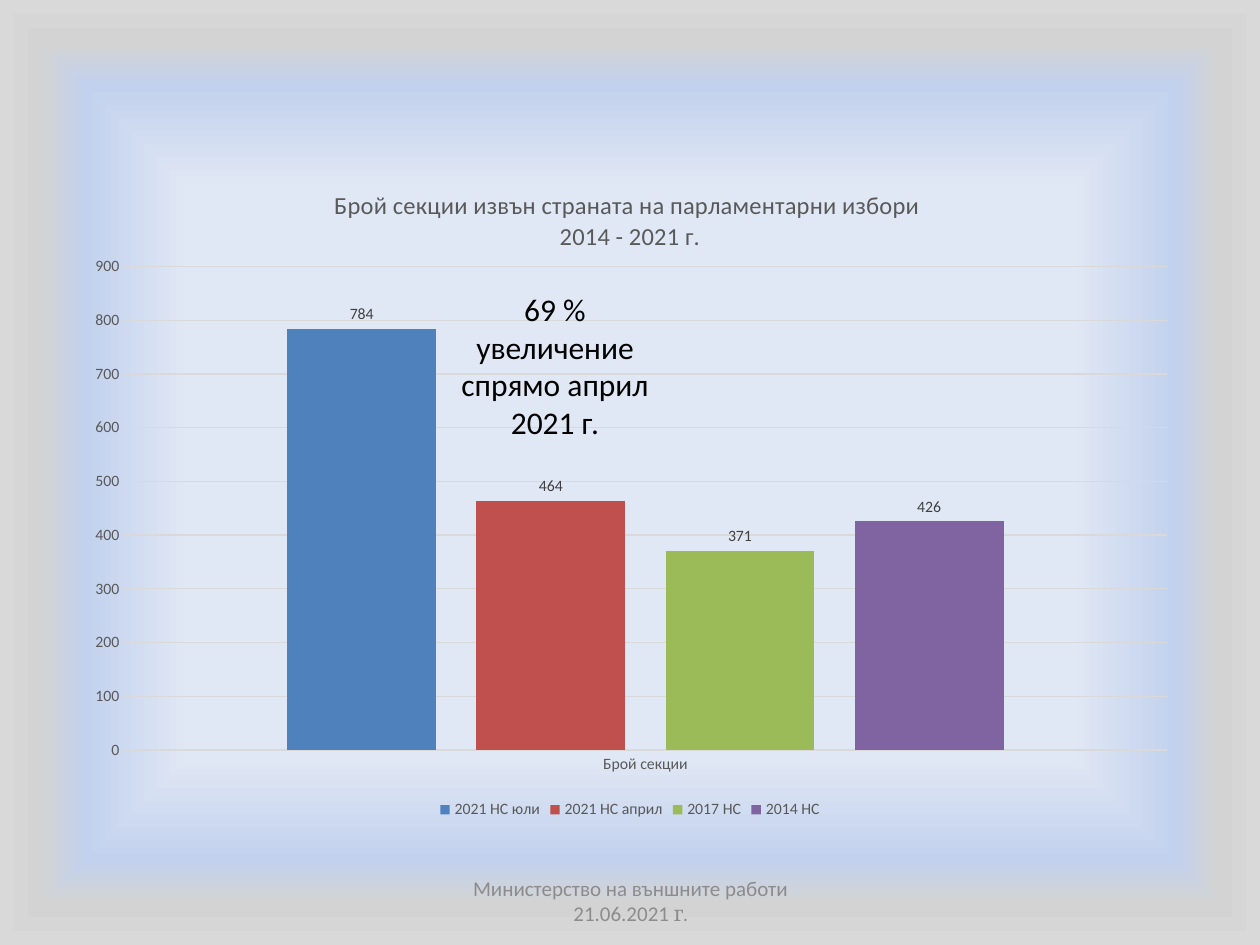
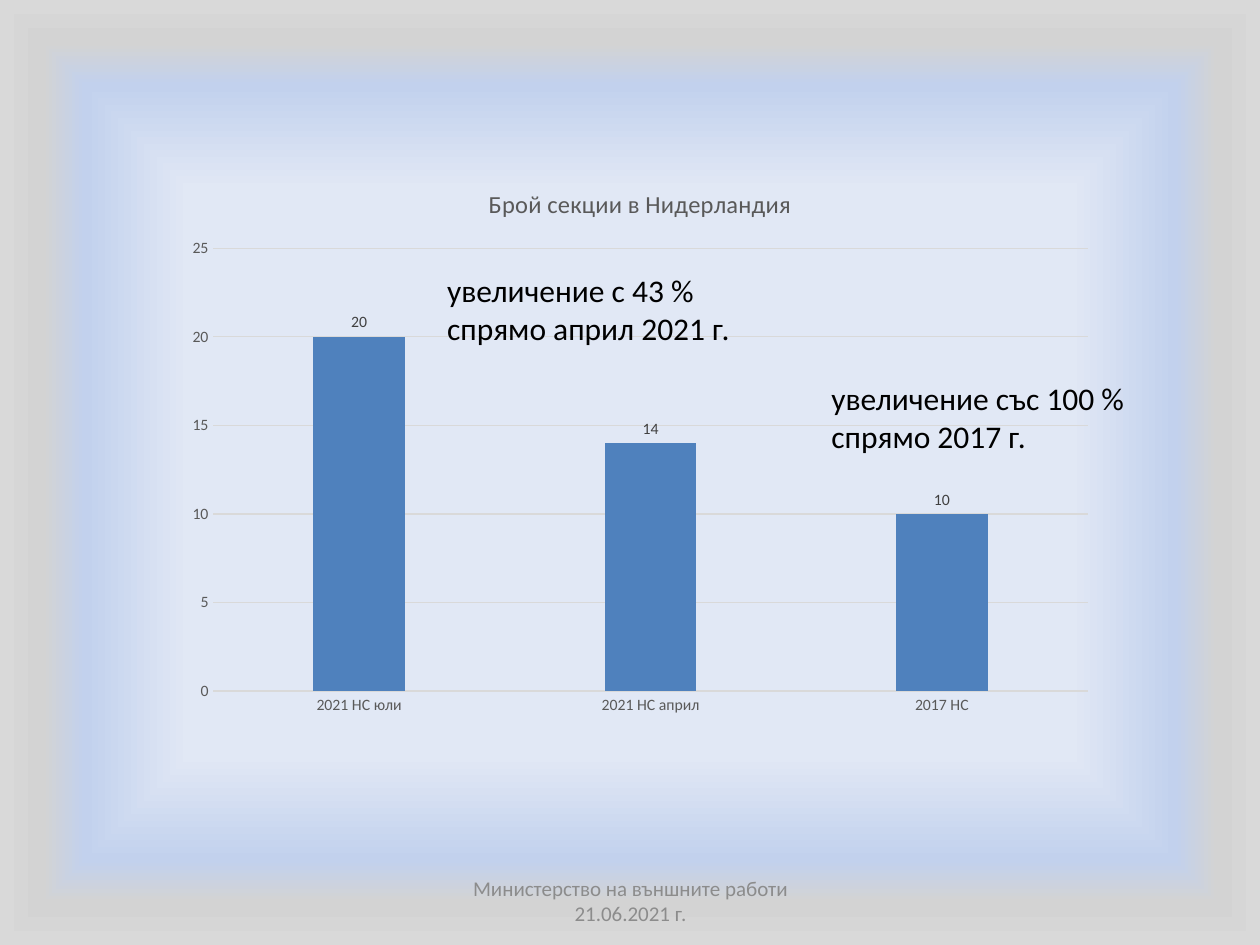
from lxml import etree
from pptx import Presentation
from pptx.chart.data import CategoryChartData
from pptx.dml.color import RGBColor
from pptx.enum.chart import XL_CHART_TYPE as ChartType, XL_LABEL_POSITION as LabelPos
from pptx.enum.chart import XL_LEGEND_POSITION as LegendPos, XL_TICK_MARK as TickMark
from pptx.enum.text import MSO_ANCHOR as Anchor, MSO_AUTO_SIZE as AutoSize, PP_ALIGN as Align
from pptx.oxml import parse_xml
from pptx.oxml.ns import nsdecls, qn
from pptx.util import Inches, Pt

SLIDE_SIZE = (10, 7.5)
FONT = "Calibri"
COLORS = {
    "footer": "8C8C8C", "note": "000000", "axis": "595959",
    "label": "404040", "grid": "D9D9D9",
    "blue": "4F81BD", "red": "C0504D", "green": "9BBB59", "purple": "8064A2",
}
BACKDROP = [(60, "E1E8F5"), (82, "C2D1ED"), (91, "D3D3D3"), (100, "D9D9D9")]
FOOTER_BOX = (3.42, 6.95, 3.17, 0.4)
MINISTRY_DATE = "Министерство на външните работи 21.06.2021"

SLIDES = [
    {
        "footer": [(MINISTRY_DATE, FONT), (" г.", "Cambria")],
        "title": "Брой секции извън страната на парламентарни избори \n2014 - 2021 г.",
        "box": (0.59, 1.31, 8.82, 5.23),
        "plot": {"x": 0.045, "y": 0.154, "w": 0.938, "h": 0.734},
        "categories": ["Брой секции"],
        "series": [
            ("2021 НС юли", [784], "blue"),
            ("2021 НС април", [464], "red"),
            ("2017 НС", [371], "green"),
            ("2014 НС", [426], "purple"),
        ],
        "scale": (900, 100),
        "notes": [("69 % увеличение спрямо април 2021 г.",
                   (3.46, 2.25, 1.89, 1.31), Align.CENTER)],
    },
    {
        "footer": [(MINISTRY_DATE + " г.", FONT)],
        "title": "Брой секции в Нидерландия",
        "box": (1.38, 1.31, 7.4, 4.45),
        "plot": None,
        "categories": ["2021 НС юли", "2021 НС април", "2017 НС"],
        "series": [("Брой секции в Нидерландия", [20, 14, 10], "blue")],
        "scale": (25, 5),
        "notes": [
            ("увеличение със 100 % спрямо 2017 г.", (6.5, 2.96, 2.68, 0.71), Align.LEFT),
            ("увеличение с 43 % спрямо април 2021 г.", (3.45, 2.1, 2.52, 0.71), Align.LEFT),
        ],
    },
]


def color(name):
    return RGBColor.from_string(COLORS[name])


def style(font, size, color_name, family=FONT):
    font.name, font.size, font.bold = family, Pt(size), False
    font.color.rgb = color(color_name)


def paint_backdrop(slide):
    """Fill the background with a frame-shaped gradient running to the centre."""
    stops = "".join(f'<a:gs pos="{pos * 1000}"><a:srgbClr val="{rgb}"/></a:gs>'
                    for pos, rgb in BACKDROP)
    gradient = parse_xml(
        f'<a:gradFill {nsdecls("a")} rotWithShape="1"><a:gsLst>{stops}</a:gsLst>'
        '<a:path path="rect"><a:fillToRect l="50000" t="50000" r="50000" b="50000"/>'
        '</a:path></a:gradFill>'.replace('path="rect"', 'path="shape"'))
    slide.background.fill.solid()
    solid = next(slide.element.iter(qn("a:solidFill")))
    solid.getparent().replace(solid, gradient)


def add_text(slide, box, runs, size, color_name, align):
    """Add a wrapping one-paragraph box; runs are (text, font family) pairs."""
    frame = slide.shapes.add_textbox(*map(Inches, box)).text_frame
    frame.word_wrap = True
    paragraph = frame.paragraphs[0]
    paragraph.alignment = align
    for text, family in runs:
        run = paragraph.add_run()
        run.text = text
        style(run.font, size, color_name, family)
    return frame


def fix_plot_area(chart, shares):
    """Pin the inner plot area to shares of the chart's size."""
    area = next(chart.element.iter(qn("c:plotArea")))
    for old in area.findall(qn("c:layout")):
        area.remove(old)
    layout = etree.Element(qn("c:layout"))
    manual = etree.SubElement(layout, qn("c:manualLayout"))
    settings = {"layoutTarget": "inner", "xMode": "edge", "yMode": "edge", **shares}
    for tag, value in settings.items():
        etree.SubElement(manual, qn(f"c:{tag}")).set("val", str(value))
    area.insert(0, layout)


def style_axes(chart, maximum, step):
    category, value = chart.category_axis, chart.value_axis
    for axis in (category, value):
        axis.major_tick_mark = axis.minor_tick_mark = TickMark.NONE
        style(axis.tick_labels.font, 9, "axis")
    value.minimum_scale, value.maximum_scale, value.major_unit = 0, maximum, step
    value.format.line.fill.background()
    value.has_major_gridlines = True
    for line in (category.format.line, value.major_gridlines.format.line):
        line.color.rgb = color("grid")
        line.width = Pt(0.75)


def add_column_chart(slide, content):
    data = CategoryChartData()
    data.categories = content["categories"]
    for name, values, _ in content["series"]:
        data.add_series(name, values)
    chart = slide.shapes.add_chart(
        ChartType.COLUMN_CLUSTERED, *map(Inches, content["box"]), data).chart
    style(chart.font, 10, "note")

    chart.has_title = True
    heading = chart.chart_title.text_frame
    heading.text = content["title"]
    for paragraph in heading.paragraphs:
        for run in paragraph.runs:
            style(run.font, 14, "axis")

    style_axes(chart, *content["scale"])
    columns = chart.plots[0]
    columns.gap_width, columns.overlap, columns.vary_by_categories = 219, -27, False
    for series, (_, _, fill) in zip(columns.series, content["series"]):
        series.format.fill.solid()
        series.format.fill.fore_color.rgb = color(fill)
        labels = series.data_labels
        labels.show_value = True
        labels.position = LabelPos.OUTSIDE_END
        style(labels.font, 9, "label")

    chart.has_legend = len(content["series"]) > 1
    if chart.has_legend:
        chart.legend.position = LegendPos.BOTTOM
        chart.legend.include_in_layout = False
        style(chart.legend.font, 9, "axis")
    if content["plot"]:
        fix_plot_area(chart, content["plot"])


def build_slide(deck, content):
    slide = deck.slides.add_slide(deck.slide_layouts[6])
    paint_backdrop(slide)
    footer = add_text(slide, FOOTER_BOX, content["footer"], 12, "footer", Align.CENTER)
    footer.vertical_anchor = Anchor.MIDDLE
    add_column_chart(slide, content)
    for text, box, align in content["notes"]:
        note = add_text(slide, box, [(text, FONT)], 18, "note", align)
        note.auto_size = AutoSize.SHAPE_TO_FIT_TEXT


def main():
    deck = Presentation()
    deck.slide_width, deck.slide_height = map(Inches, SLIDE_SIZE)
    for content in SLIDES:
        build_slide(deck, content)
    deck.save("out.pptx")


if __name__ == "__main__":
    main()
